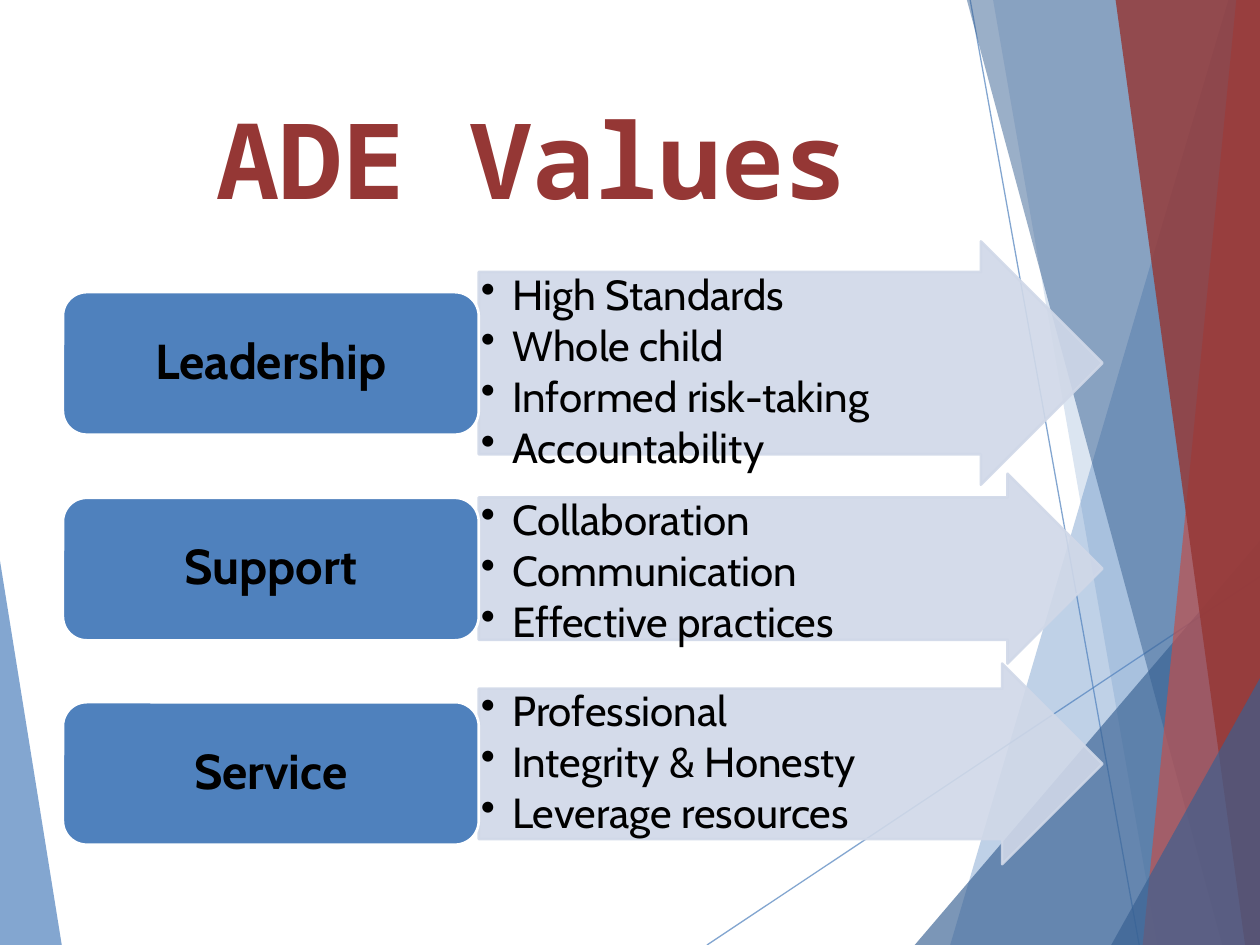
from lxml.etree import SubElement
from pptx import Presentation
from pptx.dml.color import RGBColor
from pptx.enum.shapes import MSO_CONNECTOR, MSO_SHAPE
from pptx.enum.text import MSO_ANCHOR, PP_ALIGN
from pptx.oxml.ns import qn
from pptx.util import Pt

BLUE, NAVY, RED, WINE = "4F81BD", "376092", "C0504D", "953735"
PALE, WHITE, BLACK = "D0D8E8", "FFFFFF", "000000"

# Background facets, back to front: colour, opacity in percent, corners
FACETS = [
    (BLUE, 36, [(702, 0), (543, 540), (720, 540), (720, 0)]),
    (BLUE, 20, [(567.5, 0), (661.5, 540), (720, 540), (720, 0)]),
    (NAVY, 66, [(522.7, 540), (720, 309), (720, 540)]),
    (NAVY, 50, [(552.5, 0), (698.5, 540), (720, 540), (720, 0)]),
    (RED, 70, [(706.5, 0), (653, 540), (720, 540), (720, 0)]),
    (WINE, 82, [(637.5, 0), (711.5, 540), (720, 540), (720, 0)]),
    (NAVY, 66, [(635, 540), (720, 387.5), (720, 540)]),
]
LEFT_FACET = (BLUE, 70, [(0, 320.5), (35.3, 540), (0, 540)])

# Value, label top, arrow top, arrow height, points
ROWS = [
    ("Leadership", 167, 138, 139,
     ["High Standards", "Whole child", "Informed risk-taking", "Accountability"]),
    ("Support", 284.5, 270.7, 108.5,
     ["Collaboration", "Communication", "Effective practices"]),
    ("Service", 401.3, 379.2, 114.7,
     ["Professional", "Integrity & Honesty", "Leverage resources"]),
]


def paint(fmt, color, alpha=100):
    """Give a fill a solid colour with an opacity in percent."""
    fmt.solid()
    fmt.fore_color.rgb = RGBColor.from_string(color)
    if alpha < 100:
        clr = next(fmt.fore_color._xFill.iter(qn("a:srgbClr")))
        SubElement(clr, qn("a:alpha"), val=str(alpha * 1000))


def write(shape, lines, font="Cabin", size=24, color=BLACK, bold=False,
          align=PP_ALIGN.LEFT, anchor=MSO_ANCHOR.TOP, inset=(0, 0),
          space=1.0, after=0, bullet=None):
    frame = shape.text_frame
    frame.word_wrap = True
    frame.vertical_anchor = anchor
    frame.margin_left = frame.margin_right = Pt(inset[0])
    frame.margin_top = frame.margin_bottom = Pt(inset[1])
    frame.text = "\n".join(lines)
    for para in frame.paragraphs:
        para.alignment = align
        para.line_spacing = space
        para.space_after = Pt(after)
        face = para.runs[0].font
        face.name, face.size, face.bold = font, Pt(size), bold
        face.color.rgb = RGBColor.from_string(color)
        if bullet:
            props = para._p.get_or_add_pPr()
            props.set("marL", str(Pt(18)))
            props.set("indent", str(-Pt(18)))
            SubElement(props, qn("a:buChar"), char=bullet)


def facet(slide, color, alpha, points):
    start, *rest = [(Pt(x), Pt(y)) for x, y in points]
    build = slide.shapes.build_freeform(*start)
    build.add_line_segments(rest)
    shape = build.convert_to_shape()
    shape.shadow.inherit = False
    paint(shape.fill, color, alpha)
    shape.line.fill.background()


def ray(slide, *ends):
    line = slide.shapes.add_connector(MSO_CONNECTOR.STRAIGHT, *map(Pt, ends))
    line.line.width = Pt(0.75)
    paint(line.line.fill, BLUE, 70)
    SubElement(line._element.spPr, qn("a:effectLst"))


def block(slide, kind, box, fill, edge, alpha=100):
    shape = slide.shapes.add_shape(kind, *map(Pt, box))
    shape.shadow.inherit = False
    paint(shape.fill, fill, alpha)
    paint(shape.line.fill, edge, alpha)
    shape.line.width = Pt(1.5)
    return shape


def row(slide, name, top, y, high, points):
    # Arrow with its points
    arrow = block(slide, MSO_SHAPE.RIGHT_ARROW, (273.6, y, 356.4, high),
                  PALE, PALE, 90)
    arrow.adjustments[0] = 0.75
    arrow.adjustments[1] = 0.5
    write(arrow, points, inset=(1.2, 1.2), space=0.9, after=3.2, bullet="•")
    # Label
    label = block(slide, MSO_SHAPE.ROUNDED_RECTANGLE, (36, top, 237.6, 81.4),
                  BLUE, WHITE)
    write(label, [name], size=28, bold=True, align=PP_ALIGN.CENTER,
          anchor=MSO_ANCHOR.MIDDLE, inset=(8.4, 4.2), space=0.9)


def main():
    deck = Presentation()
    deck.slide_width, deck.slide_height = Pt(720), Pt(540)
    slide = deck.slides.add_slide(deck.slide_layouts[5])

    # Background
    facet(slide, *LEFT_FACET)
    ray(slide, 404, 540, 720, 329.5)
    ray(slide, 554.4, 0, 651, 540)
    for item in FACETS:
        facet(slide, *item)

    # Title
    title = slide.shapes.title
    title.left, title.top, title.width, title.height = map(
        Pt, (54, 54, 500, 104))
    write(title, ["ADE Values"], font="Noto Sans Mono", size=60, color=WINE,
          bold=True, align=PP_ALIGN.CENTER)

    # Values
    for item in ROWS:
        row(slide, *item)
    deck.save("out.pptx")


if __name__ == "__main__":
    main()
